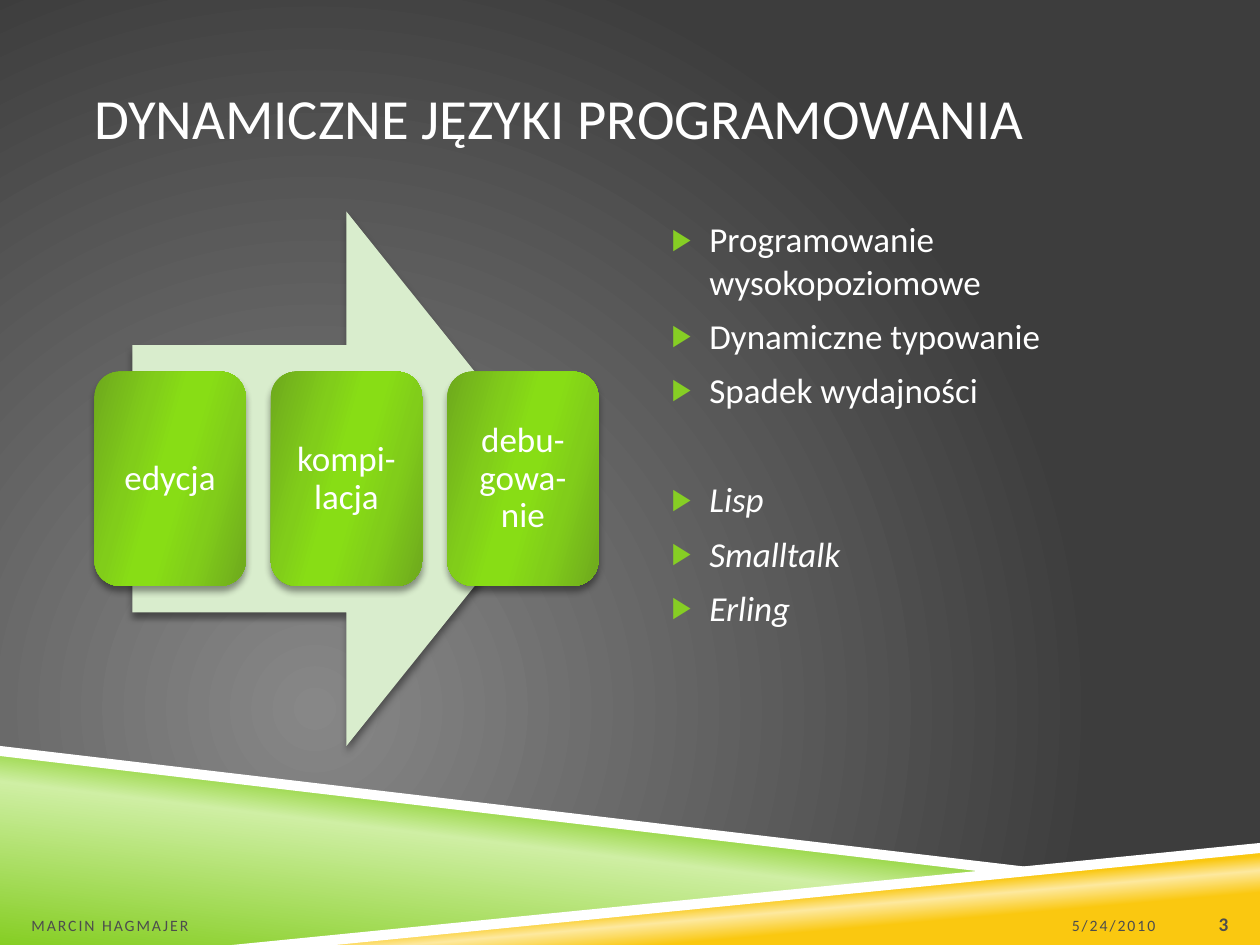
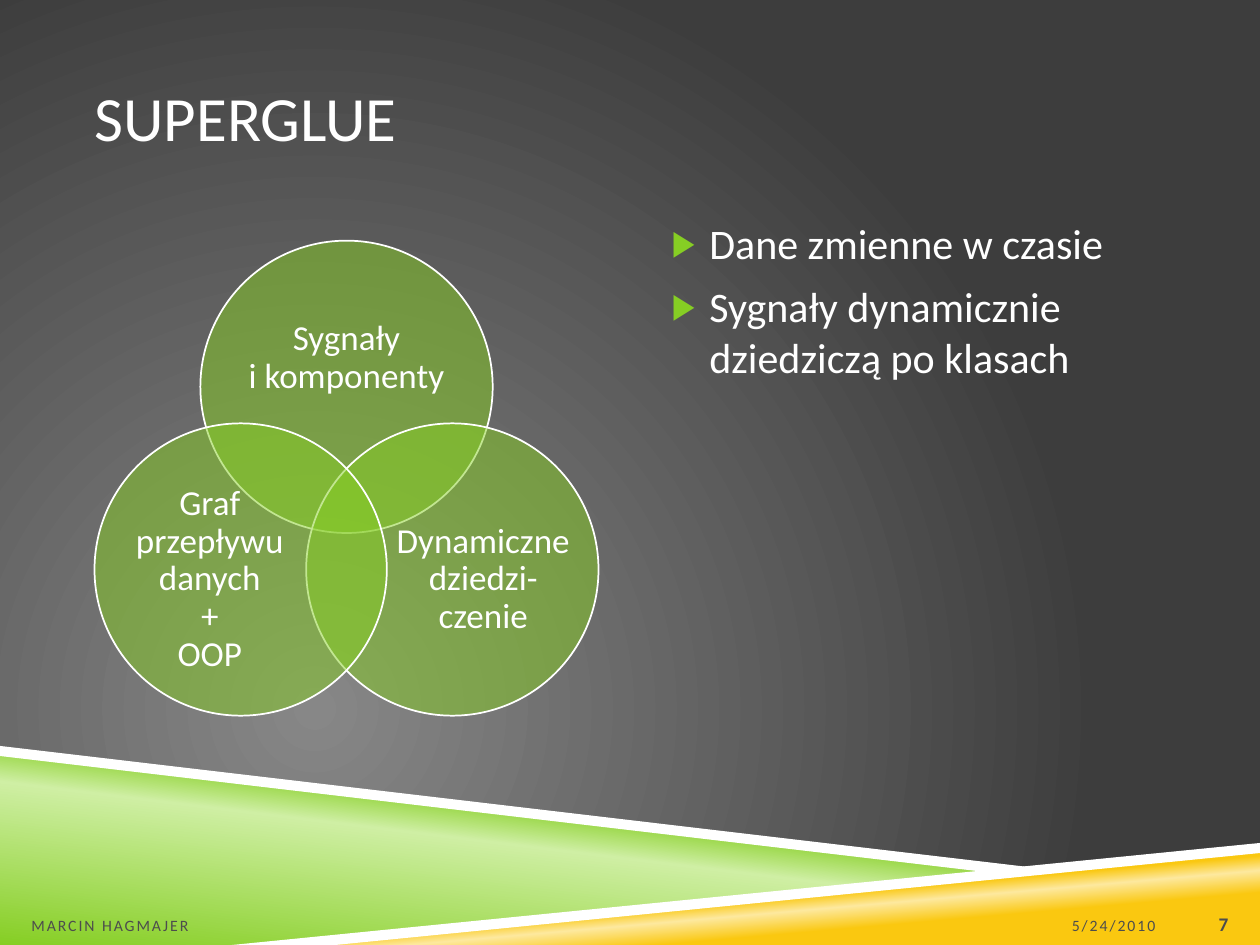
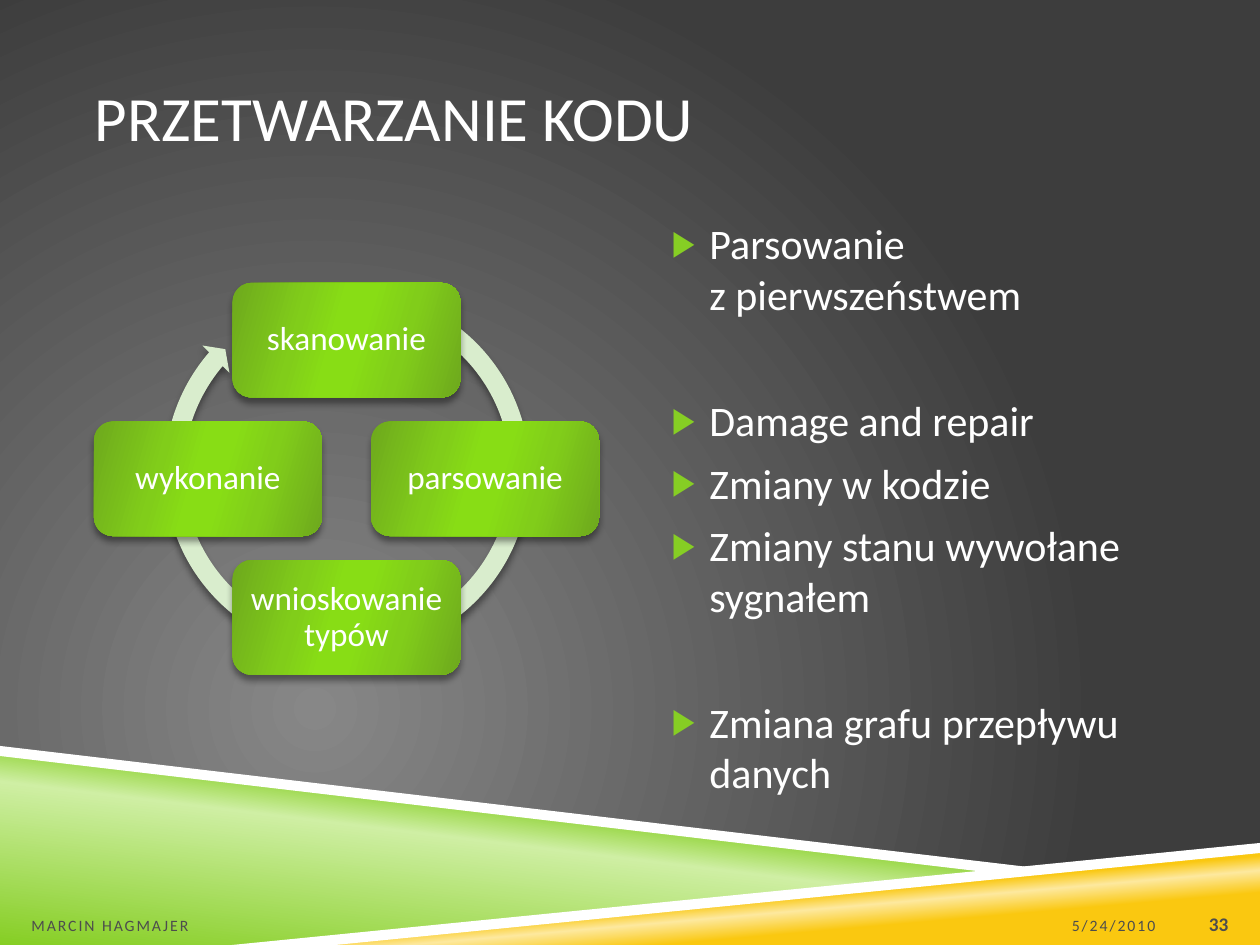
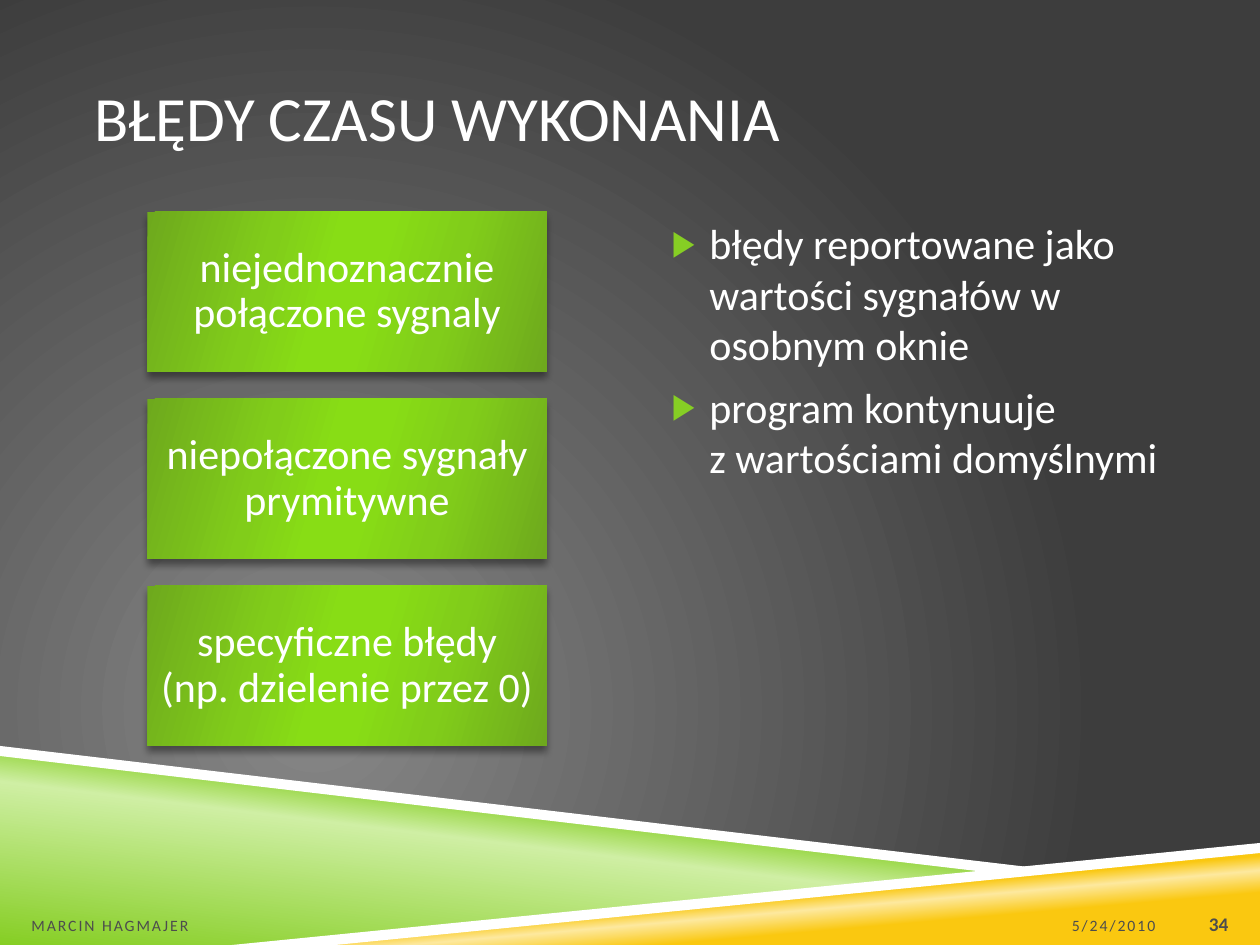
from lxml import etree
from pptx import Presentation
from pptx import util as u
from pptx.dml.color import RGBColor
from pptx.enum import shapes, text
from pptx.oxml.ns import qn

WHITE = RGBColor(0xFF, 0xFF, 0xFF)
BLACK = RGBColor(0x00, 0x00, 0x00)
GREEN = RGBColor(0x86, 0xCE, 0x24)
PALE_GREEN = RGBColor(0xD9, 0xED, 0xCD)
LIGHT_GREEN = RGBColor(0xCF, 0xEF, 0xA4)
EDGE_GREEN = RGBColor(0x6E, 0xA9, 0x1D)
MID_GREEN = RGBColor(0x81, 0xCD, 0x1A)
BRIGHT_GREEN = RGBColor(0x88, 0xDD, 0x15)
YELLOW = RGBColor(0xFA, 0xC8, 0x10)
PALE_YELLOW = RGBColor(0xFD, 0xE9, 0x9F)
FOOTER_GREY = RGBColor(0x4D, 0x4D, 0x4D)
GLOW_GREY = RGBColor(0x87, 0x87, 0x87)
DARK_GREY = RGBColor(0x3D, 0x3D, 0x3D)

BOX_STOPS = [(0, EDGE_GREEN), (30, MID_GREEN), (45, BRIGHT_GREEN),
             (55, BRIGHT_GREEN), (73, MID_GREEN), (100, EDGE_GREEN)]
BANDS = [
    ([(1.98, 7.5), (10, 6.72), (10, 7.5)],
     [(28, YELLOW), (40, PALE_YELLOW), (48, YELLOW)], 265),
    ([(0, 5.97), (7.92, 6.92), (2, 7.5), (0, 7.5)],
     [(0, GREEN), (52, LIGHT_GREEN), (66, GREEN)], 277),
    ([(0, 5.92), (0, 6), (7.9, 6.93), (8.32, 6.9)], None, None),
    ([(10, 6.69), (1.84, 7.5), (2.66, 7.5), (10, 6.77)], None, None),
]
SHAPE = shapes.MSO_SHAPE
ALIGN = text.PP_ALIGN
ANCHOR = text.MSO_ANCHOR


def add_node(parent, tag, **attributes):
    return etree.SubElement(parent, qn(tag), {name: str(value) for name, value in attributes.items()})


def set_gradient(fill, owner, stops, angle=None):
    fill.gradient()
    gradient = next(owner.iter(qn("a:gradFill")))
    gradient.clear()
    stop_list = add_node(gradient, "a:gsLst")
    for position, color in stops:
        stop = add_node(stop_list, "a:gs", pos=position * 1000)
        add_node(stop, "a:srgbClr", val=color)
    if angle is None:
        circle = add_node(gradient, "a:path", path="circle")
        add_node(circle, "a:fillToRect", l=50000, t=100000, r=100000, b=50000)
    else:
        add_node(gradient, "a:lin", ang=angle * 60000, scaled=0)


def set_frame(frame, insets, anchor):
    frame.word_wrap = True
    frame.auto_size = text.MSO_AUTO_SIZE.NONE
    frame.vertical_anchor = anchor
    frame.margin_left, frame.margin_top, frame.margin_right, frame.margin_bottom = map(u.Inches, insets)


class Deck:
    font_name = "Calibri"

    def __init__(self):
        self.presentation = Presentation()
        self.presentation.slide_width = u.Inches(10)
        self.presentation.slide_height = u.Inches(7.5)
        self.layout = self.presentation.slide_layouts[1]
        self.master = self.presentation.slide_master
        self.slide = None
        background = self.master.background
        set_gradient(background.fill, self.master.element, [(0, GLOW_GREY), (100, DARK_GREY)])
        self.place(self.layout.placeholders[0], 0.75, 0.3, 8.5, 1.25)
        self.place(self.layout.placeholders[1], 5.25, 1.68, 4, 4.24)

    def place(self, shape, left, top, width, height):
        shape.left, shape.top = u.Inches(left), u.Inches(top)
        shape.width, shape.height = u.Inches(width), u.Inches(height)

    def new_slide(self, title, number, title_size=36):
        self.slide = self.presentation.slides.add_slide(self.layout)
        if len(self.presentation.slides) == 1:
            self.draw_bands()
        frame = self.slide.shapes.title.text_frame
        set_frame(frame, (0, 0.05, 0, 0.05), ANCHOR.MIDDLE)
        self.set_text(frame.paragraphs[0], title, title_size, align=ALIGN.LEFT)
        self.footer("5/24/2010", 7, 2.17, ALIGN.RIGHT)
        self.footer("MARCIN HAGMAJER", 0.25, 3.17, ALIGN.LEFT)
        self.footer(str(number), 9.25, 0.5, ALIGN.RIGHT, size=11, bold=True)

    def draw_bands(self):
        for band_id, (points, stops, angle) in enumerate(BANDS, start=20):
            corners = [(u.Inches(x), u.Inches(y)) for x, y in points]
            builder = self.slide.shapes.build_freeform(*corners[0])
            builder.add_line_segments(corners[1:], close=True)
            band = builder.convert_to_shape()
            self.clean(band)
            if stops:
                set_gradient(band.fill, band.element, stops, angle)
            else:
                band.fill.solid()
                band.fill.fore_color.rgb = WHITE
            next(band.element.iter(qn("p:cNvPr"))).set("id", str(band_id))
            self.master.shapes.element.append(band.element)

    def clean(self, shape):
        shape.line.fill.background()
        shape.shadow.inherit = False

    def set_text(self, paragraph, content, size, color=WHITE, align=ALIGN.CENTER, bold=False, italic=False):
        paragraph.text = content
        paragraph.alignment = align
        font = paragraph.font
        font.name = self.font_name
        font.size = u.Pt(size)
        font.color.rgb = color
        font.bold = bold
        font.italic = italic

    def footer(self, content, left, width, align, size=9, bold=False):
        box = self.slide.shapes.add_textbox(u.Inches(left), u.Inches(7.02), u.Inches(width), u.Inches(0.4))
        set_frame(box.text_frame, (0, 0.05, 0, 0), ANCHOR.BOTTOM)
        self.set_text(box.text_frame.paragraphs[0], content, size, FOOTER_GREY, align, bold)
        if not bold:
            next(box.element.iter(qn("a:defRPr"))).set("spc", "110")

    def bullets(self, groups, size=24, italic_group=None):
        frame = self.slide.placeholders[1].text_frame
        set_frame(frame, (0, 0.05, 0, 0.05), ANCHOR.TOP)
        group_gap = round(size * 1.22 + 14, 1)
        paragraph = None
        for group_index, group in enumerate(groups):
            for item_index, item in enumerate(group):
                if paragraph is None:
                    paragraph, gap = frame.paragraphs[0], 0
                else:
                    paragraph, gap = frame.add_paragraph(), 7 if item_index else group_gap
                properties = paragraph._p.get_or_add_pPr()
                properties.set("marL", str(u.Inches(0.38)))
                properties.set("indent", str(u.Inches(-0.3)))
                add_node(add_node(properties, "a:buClr"), "a:srgbClr", val=GREEN)
                add_node(properties, "a:buSzPct", val=85000)
                add_node(properties, "a:buChar", char="▶")
                paragraph.space_before = u.Pt(gap)
                self.set_text(paragraph, item, size, align=ALIGN.LEFT, italic=group_index == italic_group)

    def shape(self, kind, left, top, width, height):
        shape = self.slide.shapes.add_shape(
            kind, u.Inches(left), u.Inches(top), u.Inches(width), u.Inches(height))
        self.clean(shape)
        return shape

    def cast_shadow(self, shape):
        effects = next(shape.element.iter(qn("a:effectLst")))
        shadow = add_node(effects, "a:outerShdw", blurRad=u.Pt(4), dist=u.Pt(3.3),
                          dir=90 * 60000, algn="ctr", rotWithShape=0)
        add_node(add_node(shadow, "a:srgbClr", val=BLACK), "a:alpha", val=40000)

    def arrow(self, kind, left, top, width, height, adjustments=()):
        arrow = self.shape(kind, left, top, width, height)
        arrow.fill.solid()
        arrow.fill.fore_color.rgb = PALE_GREEN
        for index, value in enumerate(adjustments):
            arrow.adjustments[index] = value
        self.cast_shadow(arrow)

    def label(self, frame, content, size, inset):
        set_frame(frame, [inset] * 4, ANCHOR.MIDDLE)
        frame.paragraphs[0].line_spacing = 0.9
        self.set_text(frame.paragraphs[0], content, size)

    def box(self, kind, content, left, top, width, height, size, inset=0.08):
        box = self.shape(kind, left, top, width, height)
        set_gradient(box.fill, box.element, BOX_STOPS, 16)
        self.cast_shadow(box)
        self.label(box.text_frame, content, size, inset)

    def circle(self, left, top, diameter):
        circle = self.shape(SHAPE.OVAL, left, top, diameter, diameter)
        circle.fill.solid()
        circle.fill.fore_color.rgb = GREEN
        add_node(next(circle.element.iter(qn("a:srgbClr"))), "a:alpha", val=50000)
        circle.line.color.rgb = WHITE
        circle.line.width = u.Pt(1)

    def caption(self, content, left, top, width, height):
        box = self.slide.shapes.add_textbox(u.Inches(left), u.Inches(top), u.Inches(width), u.Inches(height))
        self.label(box.text_frame, content, 20, 0)


def dynamic_languages(deck):
    deck.new_slide("DYNAMICZNE JĘZYKI PROGRAMOWANIA", 3, title_size=32.4)
    deck.arrow(SHAPE.RIGHT_ARROW, 1.05, 1.68, 3.4, 4.24)
    for index, step in enumerate(["edycja", "kompi-lacja", "debu-gowa-nie"]):
        deck.box(SHAPE.ROUNDED_RECTANGLE, step, 0.75 + 1.4 * index, 2.95, 1.2, 1.7, 20)
    deck.bullets([["Programowanie wysokopoziomowe", "Dynamiczne typowanie", "Spadek wydajności"],
                  ["Lisp", "Smalltalk", "Erling"]], size=20, italic_group=1)


def superglue(deck):
    deck.new_slide("SUPERGLUE", 7)
    features = [
        ((1.59, 1.91), "Sygnały\ni komponenty", (1.9, 2.32, 1.7, 1.05)),
        ((2.43, 3.36), "Dynamiczne dziedzi-czenie", (3.14, 3.96, 1.39, 1.28)),
        ((0.75, 3.36), "Graf przepływu danych\n+\nOOP", (0.97, 3.96, 1.39, 1.28)),
    ]
    for corner, content, area in features:
        deck.circle(*corner, 2.32)
        deck.caption(content, *area)
    deck.bullets([["Dane zmienne w czasie", "Sygnały dynamicznie dziedziczą po klasach"]])


def code_processing(deck):
    deck.new_slide("PRZETWARZANIE KODU", 33)
    deck.arrow(SHAPE.CIRCULAR_ARROW, 1.23, 2.22, 3.05, 3.05, (0.05, 2.73, 132.4, 177.59, 0.05))
    center_x, center_y, radius = 2.75, 3.8, 1.1
    width, height = 1.81, 0.91
    stages = [("skanowanie", 0, -1), ("parsowanie", 1, 0),
              ("wnioskowanie typów", 0, 1), ("wykonanie", -1, 0)]
    for stage, across, down in stages:
        left = center_x + radius * across - width / 2
        top = center_y + radius * down - height / 2
        deck.box(SHAPE.ROUNDED_RECTANGLE, stage, left, top, width, height, 19)
    deck.bullets([["Parsowanie\nz pierwszeństwem"],
                  ["Damage and repair", "Zmiany w kodzie", "Zmiany stanu wywołane sygnałem"],
                  ["Zmiana grafu przepływu danych"]])


def runtime_errors(deck):
    deck.new_slide("BŁĘDY CZASU WYKONANIA", 34)
    errors = ["niejednoznacznie połączone sygnaly", "niepołączone sygnały prymitywne",
              "specyficzne błędy (np. dzielenie przez 0)"]
    box_height = 1.27
    pitch = (4.24 - box_height) / (len(errors) - 1)
    for index, error in enumerate(errors):
        deck.box(SHAPE.RECTANGLE, error, 1.17, 1.68 + pitch * index, 3.17, box_height, 24, inset=0.1)
    deck.bullets([["błędy reportowane jako wartości sygnałów w osobnym oknie",
                   "program kontynuuje\nz wartościami domyślnymi"]])


def main():
    deck = Deck()
    for build in (dynamic_languages, superglue, code_processing, runtime_errors):
        build(deck)
    deck.presentation.save("out.pptx")


if __name__ == "__main__":
    main()
